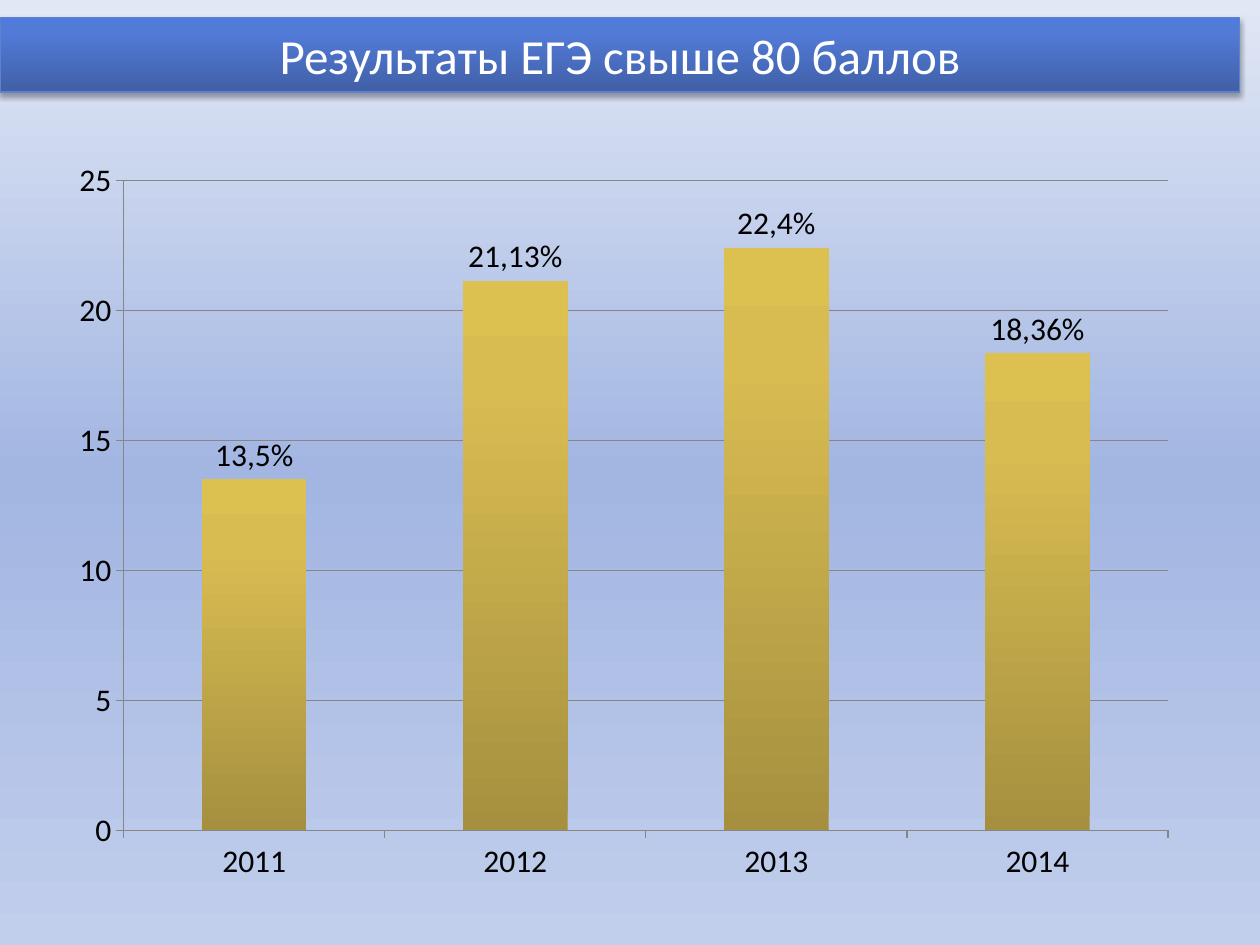
from lxml import etree
from pptx import Presentation
from pptx.chart.data import CategoryChartData
from pptx.dml.color import RGBColor
from pptx.enum.chart import XL_CHART_TYPE, XL_LABEL_POSITION, XL_TICK_MARK
from pptx.enum.text import MSO_ANCHOR, MSO_AUTO_SIZE, PP_ALIGN
from pptx.oxml import parse_xml
from pptx.oxml.ns import nsdecls, qn
from pptx.util import Inches, Pt

COLUMNS = XL_CHART_TYPE.COLUMN_CLUSTERED
OUTSIDE_END = XL_LABEL_POSITION.OUTSIDE_END
TICK_OUT = XL_TICK_MARK.OUTSIDE
MIDDLE, CENTER = MSO_ANCHOR.MIDDLE, PP_ALIGN.CENTER
NO_AUTOFIT = MSO_AUTO_SIZE.NONE

FONT = "Calibri"
COLORS = {"text": "000000", "title": "FFFFFF", "border": "6081CD",
          "grid": "868686", "shadow": "000000"}
BACKGROUND = [(0, "E0E7F5"), (50, "A3B6E2"), (100, "C1CEEC")]
BANNER = [(0, "405FA6"), (80, "527BD8"), (100, "507ADC")]
BARS = [(0, "A6903F"), (80, "D8BC52"), (100, "DCC050")]
RESULTS = {"2011": 13.5, "2012": 21.13, "2013": 22.4, "2014": 18.36}


def set_font(font, size, color):
    font.name = FONT
    font.size = Pt(size)
    font.bold = False
    font.color.rgb = RGBColor.from_string(COLORS[color])


def write_text(tf, text, size=18, color="text", align=CENTER):
    p = tf.paragraphs[0]
    p.alignment = align
    r = p.add_run()
    r.text = text
    set_font(r.font, size, color)


def set_gradient(fill, element, stops, angle):
    """Fill with any number of colour stops; angle is clockwise in degrees."""
    fill.gradient()
    grad = element.find(".//" + qn("a:gradFill"))
    new = parse_xml(f'<a:gradFill {nsdecls("a")} rotWithShape="1"><a:gsLst/>'
                    f'<a:lin ang="{angle * 60000}" scaled="0"/></a:gradFill>')
    for pos, color in stops:
        gs = etree.SubElement(new[0], qn("a:gs"), pos=str(pos * 1000))
        etree.SubElement(gs, qn("a:srgbClr"), val=color)
    grad.getparent().replace(grad, new)


def add_shadow(shape, blur, dist, alpha):
    shape.shadow.inherit = False
    effects = shape._element.spPr.find(qn("a:effectLst"))
    effects.append(parse_xml(
        f'<a:outerShdw {nsdecls("a")} blurRad="{Pt(blur)}" dist="{Pt(dist)}" '
        f'dir="5400000" rotWithShape="0"><a:srgbClr val="{COLORS["shadow"]}">'
        f'<a:alpha val="{alpha * 1000}"/></a:srgbClr></a:outerShdw>'))


def format_title(title, text):
    title.left, title.top = Inches(0), Inches(0.14)
    title.width, title.height = Inches(9.84), Inches(0.59)
    # Arrow-shaped banner outline
    title._element.spPr.find(qn("a:xfrm")).addnext(parse_xml(
        f'<a:prstGeom {nsdecls("a")} prst="homePlate"><a:avLst/></a:prstGeom>'))
    set_gradient(title.fill, title._element, BANNER, 270)
    title.line.color.rgb = RGBColor.from_string(COLORS["border"])
    title.line.width = Pt(0.75)
    add_shadow(title, blur=3.1, dist=1.8, alpha=35)
    tf = title.text_frame
    tf.word_wrap = True
    tf.auto_size = NO_AUTOFIT
    tf.vertical_anchor = MIDDLE
    write_text(tf, text, size=28, color="title")


def format_axis(axis):
    axis.major_tick_mark = TICK_OUT
    set_font(axis.tick_labels.font, 18, "text")
    lines = [axis.format.line]
    if axis.has_major_gridlines:
        lines.append(axis.major_gridlines.format.line)
    for line in lines:
        line.color.rgb = RGBColor.from_string(COLORS["grid"])
        line.width = Pt(0.75)


def add_results_chart(s):
    data = CategoryChartData()
    data.categories = list(RESULTS)
    data.add_series("Series 1", RESULTS.values())
    chart = s.shapes.add_chart(COLUMNS, Inches(0.45), Inches(1.16),
                               Inches(9), Inches(5.95), data).chart
    chart.has_legend = chart.has_title = False
    set_font(chart.font, 18, "text")

    # Axes
    chart.value_axis.minimum_scale = 0
    chart.value_axis.maximum_scale = 25
    chart.value_axis.major_unit = 5
    for axis in (chart.category_axis, chart.value_axis):
        format_axis(axis)

    # Bars and their percentage labels
    plot = chart.plots[0]
    plot.gap_width = 150
    plot.vary_by_categories = False
    series = plot.series[0]
    set_gradient(series.format.fill, series._element, BARS, 270)
    series.data_labels.show_value = True
    series.data_labels.position = OUTSIDE_END
    for i, value in enumerate(RESULTS.values()):
        label = series.points[i].data_label
        write_text(label.text_frame, f"{value}%".replace(".", ","))
        label.position = OUTSIDE_END


def main():
    prs = Presentation()
    prs.slide_width, prs.slide_height = Inches(10), Inches(7.5)
    s = prs.slides.add_slide(prs.slide_layouts[5])
    set_gradient(s.background.fill, s._element, BACKGROUND, 90)
    format_title(s.shapes.title, "Результаты ЕГЭ свыше 80 баллов")
    add_results_chart(s)
    prs.save("out.pptx")


if __name__ == "__main__":
    main()
